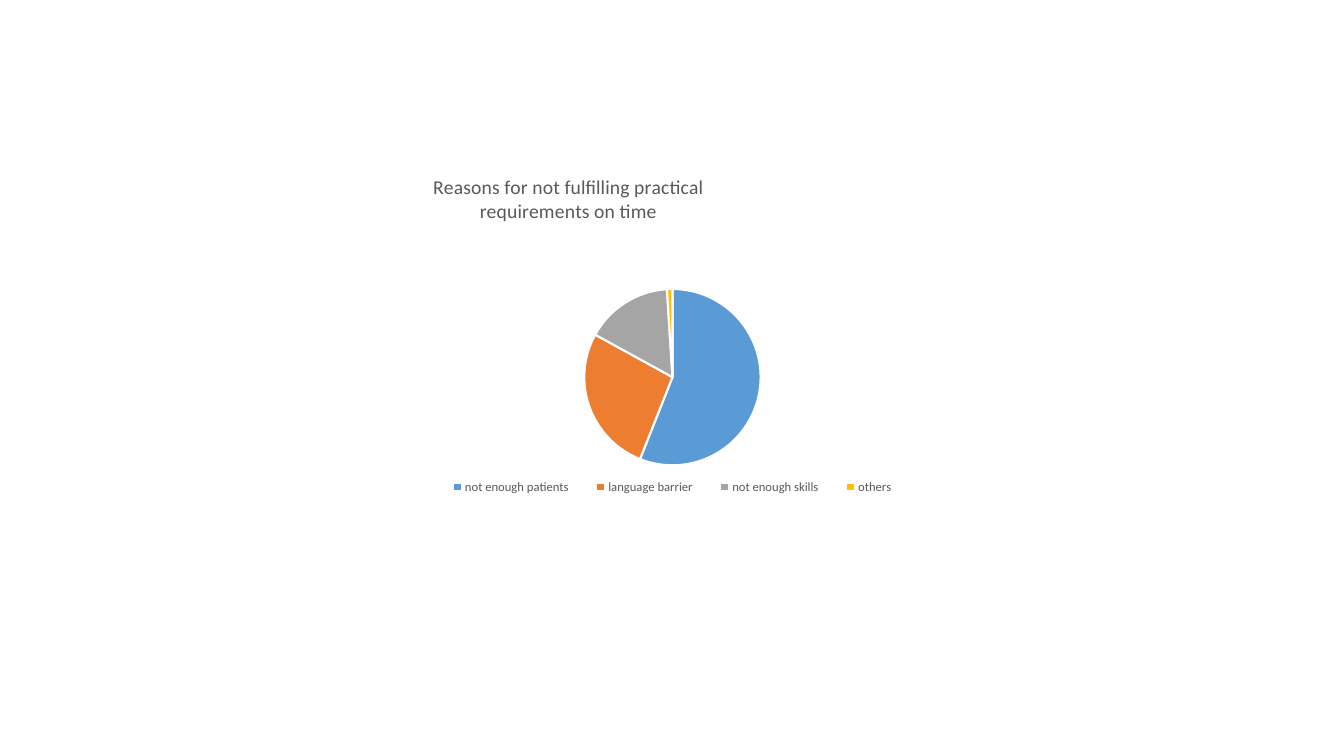
"""Build a slide with a pie chart of reasons for late practical requirements."""
from dataclasses import dataclass

from lxml import etree
from pptx import Presentation
from pptx import util as u
from pptx.chart import data as chart_data
from pptx.dml.color import RGBColor
from pptx.enum import chart as chart_enum

TITLE = "Reasons for not fulfilling practical requirements on time"
SERIES = "Series 1"
REASONS = [
    ("not enough patients", 56, "5B9BD5"),
    ("language barrier", 27, "ED7D31"),
    ("not enough skills", 16, "A5A5A5"),
    ("others", 1, "FFC000"),
]
CHART_BOX = (4.26, 1.68, 4.82, 3.3)
EDGES = {"xMode": "edge", "yMode": "edge"}
PLOT_LAYOUT = {"layoutTarget": "inner", **EDGES, "x": 0.31, "y": 0.36, "w": 0.38, "h": 0.53}
TITLE_LAYOUT = {**EDGES, "x": 0, "y": 0}
LEGEND_LAYOUT = {**EDGES, "x": 0, "y": 0.91, "w": 1, "h": 0.09}
CHART_NS = "http://schemas.openxmlformats.org/drawingml/2006/chart"


@dataclass(frozen=True)
class Theme:
    text: str = "595959"
    border: str = "FFFFFF"
    base: str = "000000"
    chart_font: str = "Roboto"
    label_font: str = "Calibri"
    title_size: float = 14
    legend_size: float = 9
    base_size: float = 10
    border_width: float = 1.5


THEME = Theme()


def tag(name):
    return f"{{{CHART_NS}}}{name}"


def style_font(font, size, color=THEME.text, name=THEME.label_font):
    font.size = u.Pt(size)
    font.name = name
    font.bold = False
    font.color.rgb = RGBColor.from_string(color)


def write_text(frame, content, **font_format):
    frame.text = content
    style_font(frame.paragraphs[0].runs[0].font, **font_format)


def set_layout(element, settings):
    layout = element.find(tag("layout"))
    if layout is None:
        layout = etree.Element(tag("layout"))
        position = element.find(tag("legendPos"))
        element.insert(0 if position is None else element.index(position) + 1, layout)
    for child in list(layout):
        layout.remove(child)
    manual = etree.SubElement(layout, tag("manualLayout"))
    for name, value in settings.items():
        etree.SubElement(manual, tag(name)).set("val", str(value))


def add_reasons_pie(slide):
    data = chart_data.CategoryChartData()
    data.categories = [name for name, _, _ in REASONS]
    data.add_series(SERIES, [value for _, value, _ in REASONS])
    box = [u.Inches(length) for length in CHART_BOX]
    chart = slide.shapes.add_chart(chart_enum.XL_CHART_TYPE.PIE, *box, data).chart
    style_font(chart.font, THEME.base_size, THEME.base, THEME.chart_font)

    chart.has_title = True
    write_text(chart.chart_title.text_frame, TITLE, size=THEME.title_size)

    chart.has_legend = True
    chart.legend.position = chart_enum.XL_LEGEND_POSITION.BOTTOM
    chart.legend.include_in_layout = True
    style_font(chart.legend.font, THEME.legend_size)

    layouts = {"title": TITLE_LAYOUT, "plotArea": PLOT_LAYOUT, "legend": LEGEND_LAYOUT}
    for part, settings in layouts.items():
        set_layout(chart.element.find(f".//{tag(part)}"), settings)
    chart.element.find(f".//{tag('title')}/{tag('overlay')}").set("val", "1")

    plot = chart.plots[0]
    plot.vary_by_categories = True
    for index, (_, _, color) in enumerate(REASONS):
        point = plot.series[0].points[index].format
        point.fill.solid()
        point.fill.fore_color.rgb = RGBColor.from_string(color)
        point.line.color.rgb = RGBColor.from_string(THEME.border)
        point.line.width = u.Pt(THEME.border_width)


def main():
    presentation = Presentation()
    presentation.slide_width = u.Inches(13.33)
    presentation.slide_height = u.Inches(7.5)
    slide = presentation.slides.add_slide(presentation.slide_layouts[6])
    add_reasons_pie(slide)
    presentation.save("out.pptx")


if __name__ == "__main__":
    main()
